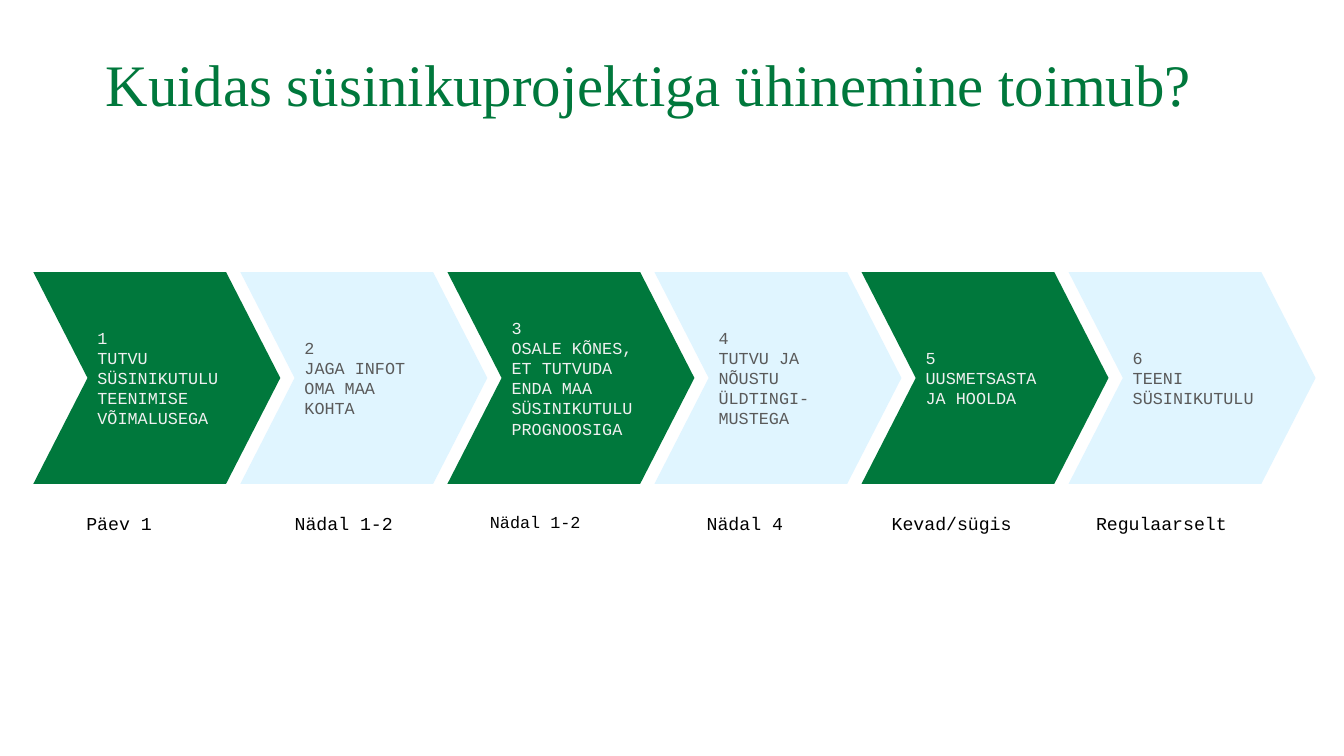
from pptx import Presentation
from pptx.dml.color import RGBColor
from pptx.enum.shapes import MSO_SHAPE
from pptx.enum.text import MSO_ANCHOR as Anchor, MSO_AUTO_SIZE as AutoSize, PP_ALIGN as Align
from pptx.util import Pt

TITLE = "Kuidas süsinikuprojektiga ühinemine toimub?"
STEPS = [
    ("TUTVU SÜSINIKUTULU TEENIMISE VÕIMALUSEGA", "Päev 1", 85, 13),
    ("JAGA INFOT OMA MAA KOHTA", "Nädal 1-2", 245.5, 13),
    ("OSALE KÕNES, ET TUTVUDA ENDA MAA SÜSINIKUTULU PROGNOOSIGA", "Nädal 1-2", 382.3, 12),
    ("TUTVU JA NÕUSTU ÜLDTINGI- MUSTEGA", "Nädal 4", 532, 13),
    ("UUSMETSASTA JA HOOLDA", "Kevad/sügis", 679.7, 13),
    ("TEENI SÜSINIKUTULU", "Regulaarselt", 829.5, 13),
]
COLORS = {"green": "00783C", "pale": "E0F5FF", "light": "F0F0F0", "grey": "5A5A5A", "black": "000000"}
STYLES = [("green", "light"), ("pale", "grey")]

CHEVRON_LEFT, CHEVRON_TOP, CHEVRON_PITCH = 23.8, 194.4, 147.9
CHEVRON_WIDTH, CHEVRON_HEIGHT = 176.4, 151.2
TIME_TOP, TIME_WIDTH, TIME_HEIGHT = 358.6, 146, 30


def color(name):
    return RGBColor.from_string(COLORS[name])


def set_margins(frame, left, top, right, bottom):
    frame.margin_left, frame.margin_top = Pt(left), Pt(top)
    frame.margin_right, frame.margin_bottom = Pt(right), Pt(bottom)


def format_text(frame, face, size, color_name, align):
    frame.word_wrap = True
    for paragraph in frame.paragraphs:
        paragraph.alignment = align
        for run in paragraph.runs:
            run.font.name = face
            run.font.size = Pt(size)
            run.font.color.rgb = color(color_name)


def add_title(slide):
    title = slide.shapes.title
    title.left, title.top, title.width, title.height = Pt(75.6), Pt(41.8), Pt(807), Pt(107.3)
    frame = title.text_frame
    frame.text = TITLE
    frame.auto_size = AutoSize.NONE
    frame.vertical_anchor = Anchor.TOP
    set_margins(frame, 0, 0, 0, 0)
    format_text(frame, "Times New Roman", 42, "green", Align.LEFT)
    frame.paragraphs[0].line_spacing = 0.85


def add_step(slide, index, action):
    fill, ink = STYLES[index % len(STYLES)]
    chevron = slide.shapes.add_shape(
        MSO_SHAPE.CHEVRON, Pt(CHEVRON_LEFT + index * CHEVRON_PITCH), Pt(CHEVRON_TOP),
        Pt(CHEVRON_WIDTH), Pt(CHEVRON_HEIGHT))
    chevron.adjustments[0] = 0.256
    chevron.shadow.inherit = False
    chevron.fill.solid()
    chevron.fill.fore_color.rgb = color(fill)
    chevron.line.fill.background()
    frame = chevron.text_frame
    frame.text = f"{index + 1}\n{action}"
    frame.vertical_anchor = Anchor.MIDDLE
    set_margins(frame, 7.2, 7.2, 0, 7.2)
    format_text(frame, "Courier New", 12, ink, Align.LEFT)


def add_time(slide, time, center, size):
    label = slide.shapes.add_textbox(
        Pt(center - TIME_WIDTH / 2), Pt(TIME_TOP), Pt(TIME_WIDTH), Pt(TIME_HEIGHT))
    frame = label.text_frame
    frame.text = time
    set_margins(frame, 7.2, 7.2, 7.2, 7.2)
    format_text(frame, "Courier New", size, "black", Align.CENTER)


def main():
    deck = Presentation()
    deck.slide_width, deck.slide_height = Pt(960), Pt(540)
    slide = deck.slides.add_slide(deck.slide_layouts[5])
    add_title(slide)
    for index, (action, time, center, size) in enumerate(STEPS):
        add_step(slide, index, action)
        add_time(slide, time, center, size)
    deck.save("out.pptx")


if __name__ == "__main__":
    main()
